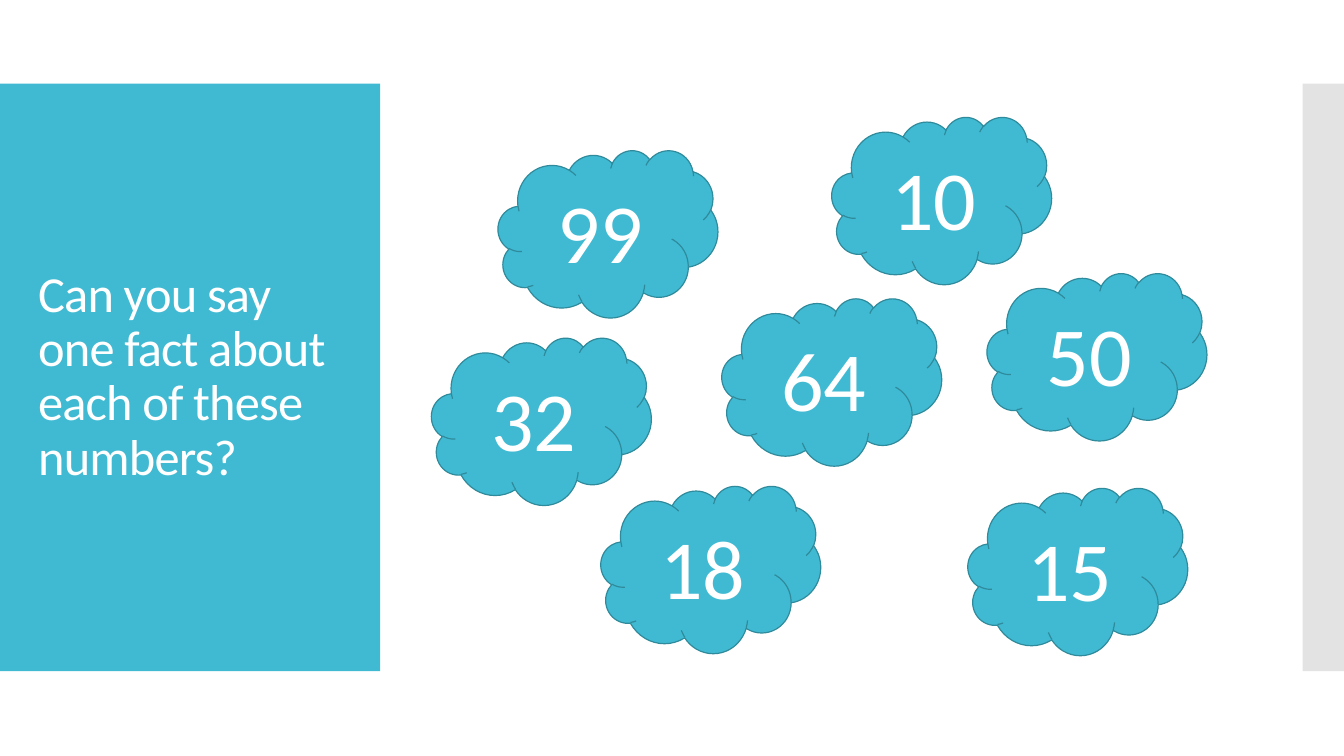
from dataclasses import dataclass

from lxml import etree
from pptx import Presentation, util as u
from pptx.dml.color import RGBColor
from pptx.enum import shapes, text
from pptx.oxml import ns

TEAL = "40BAD2"
EDGE = "2F8A9B"
GREY = "C8C8C8"
WHITE = "FFFFFF"
FONT = "Calibri"
BAND_TOP, BAND_HIGH = 0.83, 5.83
CLOUD_WIDE, CLOUD_HIGH = 2.18, 1.66


@dataclass
class Cloud:
    label: str
    left: float
    top: float


CLOUDS = [
    Cloud("99", 4.94, 1.49),
    Cloud("32", 4.28, 3.35),
    Cloud("50", 9.79, 2.71),
    Cloud("15", 9.6, 4.84),
    Cloud("64", 7.16, 2.96),
    Cloud("18", 5.96, 4.82),
    Cloud("10", 8.25, 1.16),
]


def paint(target, color: str) -> None:
    target.rgb = RGBColor.from_string(color)


def add_form(slide, kind, left: float, top: float, wide: float, high: float,
             fill: str, edge: str = "", alpha: int = 100):
    form = slide.shapes.add_shape(
        kind, u.Inches(left), u.Inches(top), u.Inches(wide), u.Inches(high))
    form.shadow.inherit = False
    form.fill.solid()
    paint(form.fill.fore_color, fill)
    if alpha < 100:
        tone = form.fill._xPr.find(".//" + ns.qn("a:srgbClr"))
        etree.SubElement(tone, ns.qn("a:alpha"), val=str(alpha * 1000))
    if edge:
        paint(form.line.color, edge)
        form.line.width = u.Pt(0.85)
    else:
        form.line.fill.background()
    return form


def write(shape, words: str, *, size: float, color: str = WHITE,
          align=text.PP_ALIGN.LEFT, lead: float = 1.0, track: float = 0) -> None:
    frame = shape.text_frame
    frame.word_wrap = True
    frame.vertical_anchor = text.MSO_ANCHOR.MIDDLE
    para = frame.paragraphs[0]
    para.alignment = align
    para.line_spacing = lead
    run = para.add_run()
    run.text = words
    run.font.name = FONT
    run.font.size = u.Pt(size)
    paint(run.font.color, color)
    if track:
        run.font._element.set("spc", str(round(track * 100)))


def add_cloud(slide, cloud: Cloud) -> None:
    form = add_form(slide, shapes.MSO_SHAPE.CLOUD, cloud.left, cloud.top,
                    CLOUD_WIDE, CLOUD_HIGH, TEAL, EDGE)
    write(form, cloud.label, size=60, align=text.PP_ALIGN.CENTER)


def main() -> None:
    deck = Presentation()
    deck.slide_width, deck.slide_height = u.Inches(13.33), u.Inches(7.5)
    slide = deck.slides.add_slide(deck.slide_layouts[6])
    block = shapes.MSO_SHAPE.RECTANGLE
    add_form(slide, block, 0, BAND_TOP, 3.77, BAND_HIGH, TEAL)
    add_form(slide, block, 12.92, BAND_TOP, 0.41, BAND_HIGH, GREY, alpha=50)
    title = slide.shapes.add_textbox(
        u.Inches(0.28), u.Inches(1.23), u.Inches(3.22), u.Inches(5.03))
    write(title, "Can you say one fact about each of these numbers?",
          size=36, lead=0.9, track=-0.6)
    for cloud in CLOUDS:
        add_cloud(slide, cloud)
    deck.save("out.pptx")


if __name__ == "__main__":
    main()
